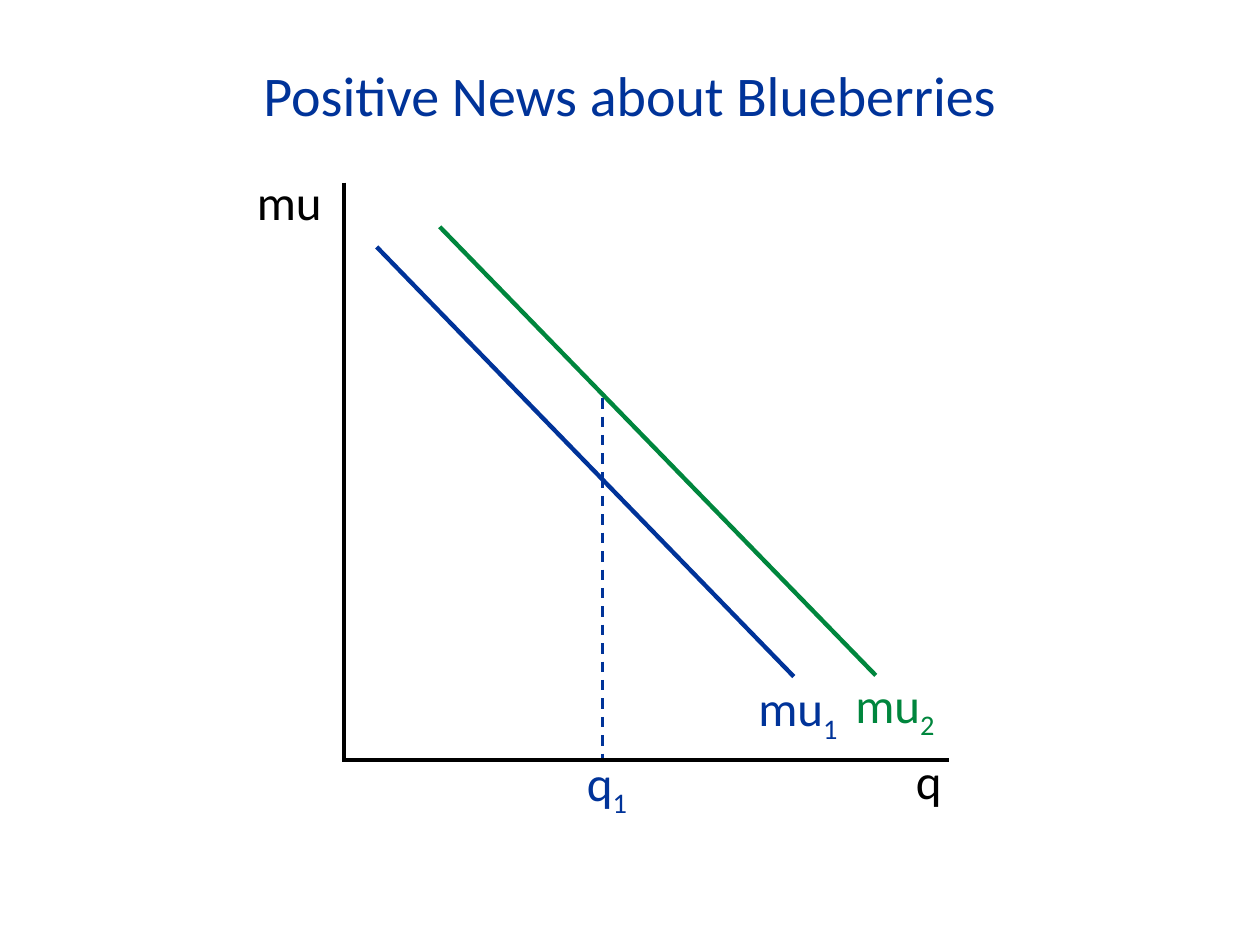
from pptx import Presentation
from pptx import util as u
from pptx.dml.color import RGBColor
from pptx.enum import dml, shapes, text
from pptx.oxml import ns, xmlchemy

BLUE = RGBColor(0x00, 0x33, 0x99)
GREEN = RGBColor(0x00, 0x86, 0x3D)
BLACK = RGBColor(0x00, 0x00, 0x00)
FONT = "Calibri"
COLS, ROWS = 100, 75
WIDE, HIGH = u.Inches(10), u.Inches(7.5)
LEFT, BASE, MARK = 27.3, 60.3, 47.8


def col(n):
    return round(WIDE * n / COLS)


def row(n):
    return round(HIGH * n / ROWS)


def place(box, x, y, w, h):
    box.left, box.top, box.width, box.height = col(x), row(y), col(w), row(h)


def write(frame, words, sub="", size=28, color=BLACK, align=None, space=None):
    frame.word_wrap = True
    para = frame.paragraphs[0]
    para.alignment = align
    para.line_spacing = space
    for part, base in ((words, None), (sub, "-25000")):
        if not part:
            continue
        run = para.add_run()
        run.text = part
        run.font.name = FONT
        run.font.size = u.Pt(size)
        run.font.color.rgb = color
        if base:
            run._r.get_or_add_rPr().set("baseline", base)


def label(tree, words, x, y, w, h, **form):
    box = tree.add_textbox(col(x), row(y), col(w), row(h))
    write(box.text_frame, words, **form)


def line(tree, start, end, color=BLACK, width=2.5, dash=None):
    link = tree.add_connector(
        shapes.MSO_CONNECTOR.STRAIGHT,
        col(start[0]), row(start[1]), col(end[0]), row(end[1]),
    )
    link.line.color.rgb = color
    link.line.width = u.Pt(width)
    if dash:
        link.line.dash_style = dash
    link._element.spPr.append(xmlchemy.OxmlElement("a:effectLst"))


def title(slide, words):
    head = slide.shapes.title
    place(head, 7, 4.3, 86, 6.4)
    frame = head.text_frame
    frame.vertical_anchor = text.MSO_ANCHOR.MIDDLE
    write(frame, words, size=32, color=BLUE, align=text.PP_ALIGN.CENTER)


def axes(slide):
    tree = slide.shapes.add_group_shape().shapes
    line(tree, (LEFT, 14.5), (LEFT, BASE + 0.2))
    line(tree, (LEFT, BASE), (75.3, BASE))
    label(tree, "q", 71.7, 59.1, 5.1, 5.7)
    label(tree, "mu", 19.4, 14, 9.2, 4.9, space=0.8)


def curve(slide, start, end, spot, sub, color):
    line(slide.shapes, start, end, color)
    label(slide.shapes, "mu", *spot, 9.2, 4.9, sub=sub, color=color, space=0.8)


def marker(slide):
    stops = (31.6, 37.9, BASE - 0.1)
    for top, low in zip(stops, stops[1:]):
        line(slide.shapes, (MARK, top), (MARK, low), BLUE, 1.5,
             dml.MSO_LINE.DASH)
    label(slide.shapes, "q", 45.6, 59.2, 7.5, 5.7, sub="1", color=BLUE)


def main():
    deck = Presentation()
    deck.slide_width, deck.slide_height = WIDE, HIGH
    slide = deck.slides.add_slide(deck.slide_layouts.get_by_name("Title Only"))
    title(slide, "Positive News about Blueberries")
    axes(slide)
    curve(slide, (29.9, 19.6), (63, 53.7), (59.2, 53.8), "1", BLUE)
    curve(slide, (34.9, 18), (69.5, 53.6), (66.9, 53.5), "2", GREEN)
    marker(slide)
    deck.save("out.pptx")


if __name__ == "__main__":
    main()
